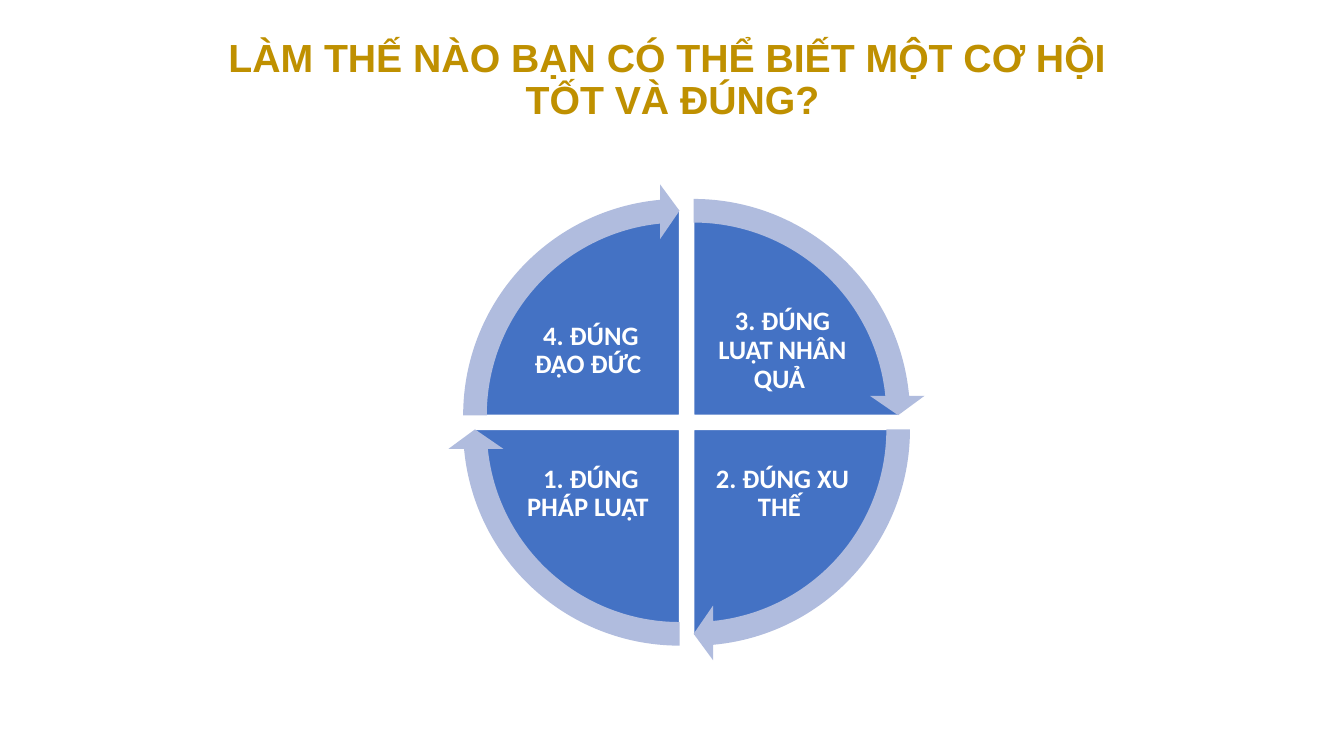
from dataclasses import dataclass

from pptx import Presentation
from pptx.dml.color import RGBColor
from pptx.enum.shapes import MSO_SHAPE
from pptx.enum.text import MSO_ANCHOR, PP_ALIGN
from pptx.shapes.autoshape import Shape
from pptx.slide import Slide
from pptx.util import Emu, Pt

PX = 9144  # 100 px to the inch
GOLD, BLUE, PALE_BLUE, WHITE = "BF9000", "4472C4", "B0BCDE", "FFFFFF"

# Angles in the unit of shape adjustments: 216 is a full turn
FULL_TURN = 216
QUARTER_TURN = 54
ARROW_SWEEP = 50.725

CENTRE_X, CENTRE_Y = 681, 419
QUADRANT_OFFSET = 7
PIE_SIZE, ARROW_SIZE = 409, 460
LABEL_WIDTH, LABEL_HEIGHT = 151, 112
LABEL_OFFSET_X, LABEL_OFFSET_Y = 95, 71


@dataclass(frozen=True)
class Quadrant:
    label: str
    side_x: int  # -1 left, 1 right
    side_y: int  # -1 top, 1 bottom
    start: int


QUADRANTS = [
    Quadrant("3. ĐÚNG LUẬT NHÂN QUẢ ", 1, -1, 162),
    Quadrant("2. ĐÚNG XU THẾ ", 1, 1, 0),
    Quadrant("1. ĐÚNG PHÁP LUẬT ", -1, 1, 54),
    Quadrant("4. ĐÚNG ĐẠO ĐỨC ", -1, -1, 108),
]


def px(value: float) -> Emu:
    return Emu(round(value * PX))


def colour(code: str) -> RGBColor:
    return RGBColor.from_string(code)


def add_text(slide: Slide, text: str, left: float, top: float, width: int, height: int,
             size: int, font: str, hue: str, anchor: MSO_ANCHOR,
             inset_x: int, inset_y: int) -> None:
    frame = slide.shapes.add_textbox(px(left), px(top), px(width), px(height)).text_frame
    frame.word_wrap = True
    frame.vertical_anchor = anchor
    frame.margin_left = frame.margin_right = px(inset_x)
    frame.margin_top = frame.margin_bottom = px(inset_y)
    paragraph = frame.paragraphs[0]
    paragraph.text = text
    paragraph.alignment = PP_ALIGN.CENTER
    paragraph.line_spacing = 0.9
    paragraph.font.size = Pt(size)
    paragraph.font.name = font
    paragraph.font.bold = True
    paragraph.font.color.rgb = colour(hue)


def add_round_part(slide: Slide, kind: MSO_SHAPE, quadrant: Quadrant, size: int,
                   fill: str, adjustments: list[float]) -> Shape:
    left = CENTRE_X + quadrant.side_x * QUADRANT_OFFSET - size / 2
    top = CENTRE_Y + quadrant.side_y * QUADRANT_OFFSET - size / 2
    part = slide.shapes.add_shape(kind, px(left), px(top), px(size), px(size))
    part.shadow.inherit = False
    part.fill.solid()
    part.fill.fore_color.rgb = colour(fill)
    for index, value in enumerate(adjustments):
        part.adjustments[index] = value
    return part


def add_pie(slide: Slide, quadrant: Quadrant) -> None:
    end = (quadrant.start + QUARTER_TURN) % FULL_TURN
    pie = add_round_part(slide, MSO_SHAPE.PIE, quadrant, PIE_SIZE, BLUE, [quadrant.start, end])
    pie.line.color.rgb = colour(WHITE)
    pie.line.width = Pt(1)


def add_label(slide: Slide, quadrant: Quadrant) -> None:
    left = CENTRE_X + quadrant.side_x * LABEL_OFFSET_X - LABEL_WIDTH / 2
    top = CENTRE_Y + quadrant.side_y * LABEL_OFFSET_Y - LABEL_HEIGHT / 2
    add_text(slide, quadrant.label, left, top, LABEL_WIDTH, LABEL_HEIGHT,
             19, "Calibri", WHITE, MSO_ANCHOR.MIDDLE, 3, 3)


def add_arrow(slide: Slide, quadrant: Quadrant) -> None:
    arrow = add_round_part(
        slide, MSO_SHAPE.CIRCULAR_ARROW, quadrant, ARROW_SIZE, PALE_BLUE,
        [0.051, 3.275, quadrant.start + ARROW_SWEEP, quadrant.start, 0.059])
    arrow.line.fill.background()


def main() -> None:
    presentation = Presentation()
    presentation.slide_width, presentation.slide_height = px(1333), px(750)
    slide = presentation.slides.add_slide(presentation.slide_layouts[6])

    # Title
    add_text(slide, "LÀM THẾ NÀO BẠN CÓ THỂ BIẾT MỘT CƠ HỘI \vTỐT VÀ ĐÚNG?",
             167, 19, 1000, 108, 28, "Arial", GOLD, MSO_ANCHOR.BOTTOM, 10, 5)

    # Quarters of the cycle with their labels
    for quadrant in QUADRANTS:
        add_pie(slide, quadrant)
        add_label(slide, quadrant)

    # Arrows around the cycle, above the quarters
    for quadrant in QUADRANTS:
        add_arrow(slide, quadrant)

    presentation.save("out.pptx")


if __name__ == "__main__":
    main()
